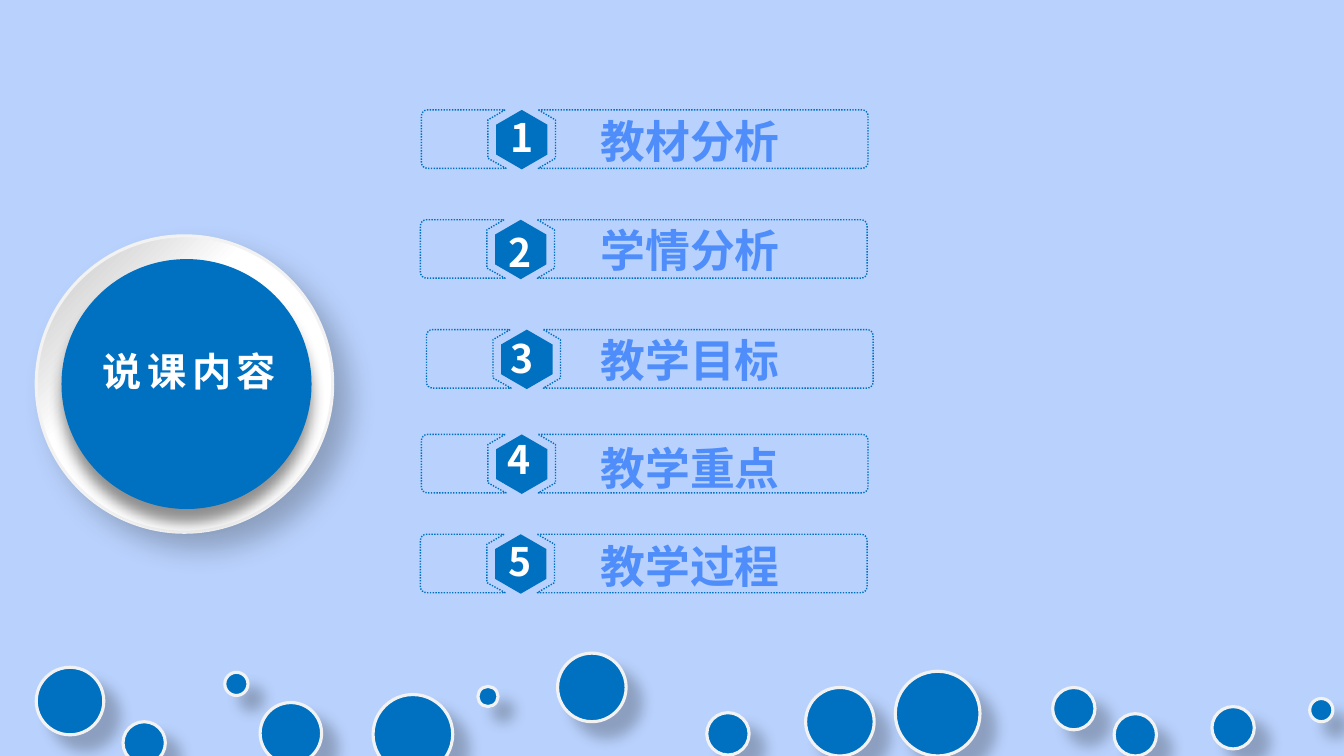
from math import cos, pi, sin

from lxml import etree
from pptx import Presentation
from pptx.dml.color import RGBColor
from pptx.enum.dml import MSO_LINE
from pptx.enum.shapes import MSO_SHAPE
from pptx.enum.text import MSO_AUTO_SIZE, PP_ALIGN
from pptx.oxml.ns import qn
from pptx.util import Inches, Pt

OVAL = MSO_SHAPE.OVAL
DOTTED = MSO_LINE.ROUND_DOT
FIT = MSO_AUTO_SIZE.SHAPE_TO_FIT_TEXT
LEFT, CENTER = PP_ALIGN.LEFT, PP_ALIGN.CENTER
CJK = "Noto Sans CJK SC"
HEX = {"back": "B9D2FD", "blue": "0070C0", "rim": "F2F2F2", "gray": "BFBFBF",
       "white": "FFFFFF", "label": "4F8EFA", "shade": "000000"}

# Label, frame left and top, digit left, top and width, label top
ITEMS = [("教材分析", 4.18, 1.09, 4.96, 1.08, 0.61, 1.08),
         ("学情分析", 4.17, 2.18, 4.95, 2.22, 0.77, 2.16),
         ("教学目标", 4.23, 3.27, 4.97, 3.27, 0.77, 3.25),
         ("教学重点", 4.18, 4.31, 4.94, 4.27, 0.77, 4.32),
         ("教学过程", 4.17, 5.3, 4.95, 5.28, 0.77, 5.3)]

# Left, top and diameter of each dot
DOTS = [(0.36, 6.62, 0.67), (1.22, 7.16, 0.42), (2.23, 6.67, 0.23),
        (2.58, 6.97, 0.61), (3.7, 6.89, 0.79), (4.74, 6.81, 0.2),
        (5.53, 6.48, 0.68), (7.01, 7.07, 0.42), (7.99, 6.82, 0.68),
        (8.88, 6.66, 0.84), (10.44, 6.82, 0.42), (11.05, 7.08, 0.42),
        (12.02, 7.01, 0.42), (12.99, 6.93, 0.23)]


def color(name):
    return RGBColor.from_string(HEX[name])


def add(parent, tag, **attrs):
    return etree.SubElement(parent, qn(tag), {k: str(v) for k, v in attrs.items()})


def tint(parent, name, alpha=None):
    node = add(parent, "a:srgbClr", val=HEX[name])
    if alpha:
        add(node, "a:alpha", val=alpha * 1000)


def shade(parent, alpha, blur, dist, angle):
    effects = add(parent, "a:effectLst")
    shadow = add(effects, "a:outerShdw", blurRad=Pt(blur), dist=Pt(dist),
                 dir=angle * 60000, algn="ctr", rotWithShape=0)
    tint(shadow, "shade", alpha)
    return effects


def add_disc(shapes, left, top, size, rim=True, shadow=(23, 10, 15, 45)):
    disc = shapes.add_shape(OVAL, Inches(left), Inches(top), Inches(size), Inches(size))
    disc.fill.solid()
    disc.fill.fore_color.rgb = color("blue")
    if rim:
        disc.line.color.rgb = color("rim")
        disc.line.width = Pt(2.25)
    else:
        disc.line.fill.background()
    shade(disc._element.spPr, *shadow)
    return disc


def add_text(shapes, text, box, size, tone, align=LEFT, wrap=True, font=CJK):
    holder = shapes.add_textbox(*[Inches(v) for v in box])
    frame = holder.text_frame
    frame.word_wrap = wrap
    frame.auto_size = FIT
    para = frame.paragraphs[0]
    para.alignment = align
    run = para.add_run()
    run.text = text
    for key, value in {"size": Pt(size), "bold": True, "name": font}.items():
        setattr(run.font, key, value)
    run.font.color.rgb = color(tone)
    add(run.font._element, "a:ea", typeface=CJK)
    return run


def add_path(shapes, left, top, loops):
    spots = [[(Inches(left + x), Inches(top + y)) for x, y in loop] for loop in loops]
    pen = shapes.build_freeform(*spots[0][0])
    pen.add_line_segments(spots[0][1:])
    for loop in spots[1:]:
        pen.move_to(*loop[0])
        pen.add_line_segments(loop[1:])
    shape = pen.convert_to_shape()
    shape.shadow.inherit = False
    return shape


def arc(x, y, start, radius=0.06, steps=4):
    turns = [start + i * pi / 2 / steps for i in range(steps + 1)]
    return [(x + radius * cos(t), y + radius * sin(t)) for t in turns]


def add_badge(slide, left, top, size):
    # Rim with a soft gradient
    rim = add_disc(slide.shapes, left, top, size, shadow=(23, 20, 15, 45))
    props = rim._element.spPr
    solid = props.find(qn("a:solidFill"))
    grad = etree.Element(qn("a:gradFill"), rotWithShape="1")
    stops = add(grad, "a:gsLst")
    for pos, name in ((0, "gray"), (37, "white"), (100, "white")):
        tint(add(stops, "a:gs", pos=pos * 1000), name)
    add(grad, "a:lin", ang=45 * 60000, scaled=0)
    props.replace(solid, grad)
    # Blue core and title
    add_disc(slide.shapes, left + 0.25, top + 0.23, size - 0.46,
             rim=False, shadow=(43, 10, 10, 90))
    title = add_text(slide.shapes, "说课内容", (left + 0.56, top + 1.06, 2, 0.57),
                     28, "white", wrap=False, font="Arial")
    props = title.font._element
    props.set("spc", "400")
    props.find(qn("a:solidFill")).addnext(shade(props, 43, 10, 10, 90))


def add_item(slide, number, label, left, top, num_x, num_y, num_w, label_y):
    group = slide.shapes.add_group_shape().shapes
    # Dotted frame, open around the hexagon
    wide, high, bend = 4.43, 0.58, 0.06
    west = [(0.83, 0), (0.66, 0.1), (0.66, high - 0.1), (0.84, high),
            *arc(bend, high - bend, pi / 2), *arc(bend, bend, pi), (0.83, 0)]
    east = [(1.16, 0), *arc(wide - bend, bend, -pi / 2),
            *arc(wide - bend, high - bend, 0), (1.16, high),
            (1.33, high - 0.1), (1.33, 0.1), (1.16, 0)]
    frame = add_path(group, left, top, [west, east])
    frame.fill.background()
    frame.line.color.rgb = color("blue")
    frame.line.width = Pt(1)
    frame.line.dash_style = DOTTED
    # Numbered hexagon
    w, h = 0.51, 0.59
    hexa = add_path(group, left + 0.74, top, [[
        (w / 2, 0), (w, h / 4), (w, h * 3 / 4), (w / 2, h),
        (0, h * 3 / 4), (0, h / 4), (w / 2, 0)]])
    hexa.fill.solid()
    hexa.fill.fore_color.rgb = color("blue")
    hexa.line.fill.background()
    add_text(group, str(number), (num_x, num_y, num_w, 0.57), 28, "white")
    # Label
    add_text(slide.shapes, label, (5.71, label_y, 2.27, 0.64), 32, "label", CENTER)


def main():
    deck = Presentation()
    deck.slide_width, deck.slide_height = Inches(13.33), Inches(7.5)
    slide = deck.slides.add_slide(deck.slide_layouts[6])
    slide.background.fill.solid()
    slide.background.fill.fore_color.rgb = color("back")
    for dot in DOTS:
        add_disc(slide.shapes, *dot)
    add_badge(slide, 0.36, 2.34, 2.94)
    for number, item in enumerate(ITEMS, 1):
        add_item(slide, number, *item)
    deck.save("out.pptx")


if __name__ == "__main__":
    main()
